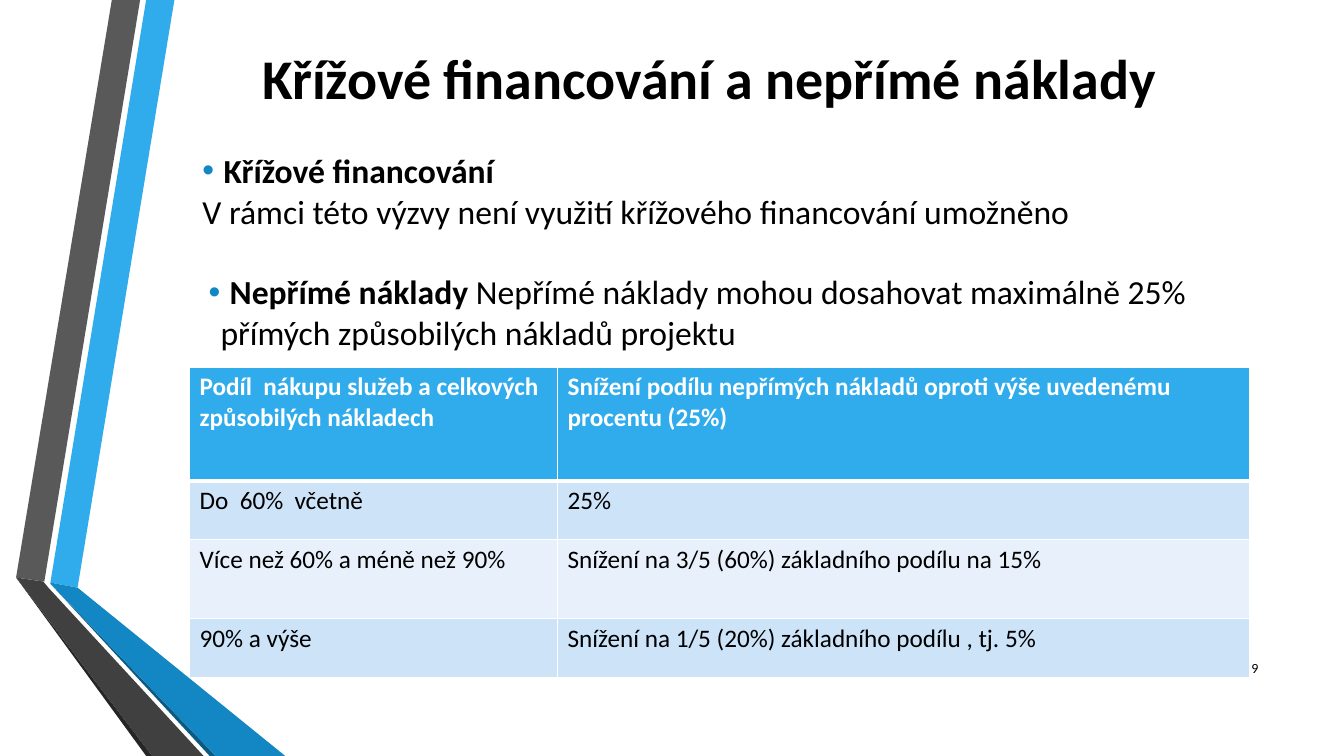
"""Build the slide on cross-financing and indirect costs."""
import pptx
import pptx.dml.color
import pptx.enum.text
import pptx.oxml
import pptx.oxml.ns
import pptx.util
from lxml import etree

Inches, Pt = pptx.util.Inches, pptx.util.Pt
ALIGN, ANCHOR = pptx.enum.text.PP_ALIGN, pptx.enum.text.MSO_ANCHOR
FONT = "Calibri"
BLACK, WHITE, SKY, BLUE = "000000", "FFFFFF", "30ACEC", "1287C3"

BANDS = [
    (SKY, [(0.5, 5.78), (0.77, 5.83), (1.73, 0), (1.45, 0)]),
    ("595959", [(1.39, 0), (1.11, 0), (0.16, 5.73), (0.44, 5.77)]),
    ("262626", [(0.16, 5.73), (1.45, 7.5), (1.51, 7.5)]),
    ("0C5A82", [(0.5, 5.79), (2.08, 7.5), (2.14, 7.5)]),
    (BLUE, [(0.5, 5.79), (2.14, 7.5), (2.83, 7.5), (0.77, 5.83), (0.5, 5.78)]),
    ("404040", [(2.02, 7.5), (0.48, 5.83), (0.43, 5.77), (0.16, 5.73), (1.51, 7.5)]),
]
TITLE = "Křížové financování a nepřímé náklady"
BODY = [
    dict(runs=[("Křížové financování", True)], left=0.71, bullet=True),
    dict(runs=[("V rámci této výzvy není využití křížového financování umožněno", False)],
         left=0.5),
    dict(runs=[("Nepřímé náklady ", True),
               ("Nepřímé náklady mohou dosahovat maximálně 25%", False)],
         left=0.77, bullet=True, gap=29),
    dict(runs=[("přímých způsobilých nákladů projektu", False)], left=0.68),
]
NUMBER = "9"
COLS = [3.65, 6.86]
ROWS = [
    (1.13, SKY, ["Podíl  nákupu služeb a celkových způsobilých nákladech",
                 "Snížení podílu nepřímých nákladů oproti výše uvedenému  procentu (25%)"]),
    (0.58, "CDE3F8", ["Do  60%  včetně", "25%"]),
    (0.79, "E8F1FB", ["Více než 60% a méně než 90%",
                      "Snížení na 3/5 (60%) základního podílu na 15%"]),
    (0.58, "CDE3F8", ["90% a výše", "Snížení na 1/5 (20%) základního podílu , tj. 5%"]),
]


def paint(part, color):
    part.solid()
    part.fore_color.rgb = pptx.dml.color.RGBColor.from_string(color)


def node(root, tag, **attrs):
    return etree.SubElement(root, pptx.oxml.ns.qn(tag), **attrs)


def write(para, text, size=24, color=BLACK, bold=False, align=ALIGN.LEFT):
    para.alignment = align
    run = para.add_run()
    run.text = text
    font = run.font
    font.name, font.size, font.bold = FONT, Pt(size), bold
    paint(font.fill, color)


def frame(slide, left, top, width, height):
    text = slide.shapes.add_textbox(*map(Inches, (left, top, width, height))).text_frame
    text.word_wrap = True
    return text


def indent(para, left, bullet):
    props = para._p.get_or_add_pPr()
    props.set("marL", str(Inches(left)))
    props.set("indent", str(Inches(-0.21 if bullet else 0)))
    if bullet:
        node(node(props, "a:buClr"), "a:srgbClr", val=BLUE)
        node(props, "a:buFont", typeface="Arial")
        node(props, "a:buChar", char="•")


def border(cell, top, bottom):
    props = cell._tc.get_or_add_tcPr()
    for side, width in zip("LRTB", (1, 1, top, bottom)):
        line = node(props, "a:ln" + side, w=str(Pt(width)))
        node(node(line, "a:solidFill"), "a:srgbClr", val=WHITE)


def draw_bands(slide):
    for color, points in BANDS:
        spots = [(Inches(x), Inches(y)) for x, y in points]
        build = slide.shapes.build_freeform(*spots[0])
        build.add_line_segments(spots[1:], close=True)
        band = build.convert_to_shape()
        band.shadow.inherit = False
        paint(band.fill, color)
        band.line.fill.background()


def draw_body(slide):
    text = frame(slide, 1.41, 1.44, 11.26, 2.93)
    for i, item in enumerate(BODY):
        para = text.add_paragraph() if i else text.paragraphs[0]
        para.space_before = Pt(item.get("gap", 0))
        indent(para, item["left"], item.get("bullet", False))
        for words, bold in item["runs"]:
            write(para, words, bold=bold)


def draw_table(slide):
    high = sum(row[0] for row in ROWS)
    table = slide.shapes.add_table(len(ROWS), len(COLS), Inches(1.88), Inches(3.64),
                                   Inches(sum(COLS)), Inches(high)).table
    for col, width in zip(table.columns, COLS):
        col.width = Inches(width)
    for r, (height, fill, texts) in enumerate(ROWS):
        table.rows[r].height = Inches(height)
        head = r == 0
        for c, words in enumerate(texts):
            cell = table.cell(r, c)
            border(cell, 3 if r == 1 else 1, 3 if head else 1)
            paint(cell.fill, fill)
            write(cell.text_frame.paragraphs[0], words, size=18,
                  color=WHITE if head else BLACK, bold=head)


def main():
    deck = pptx.Presentation()
    deck.slide_width, deck.slide_height = Inches(13.33), Inches(7.5)
    slide = deck.slides.add_slide(deck.slide_layouts[6])
    draw_bands(slide)
    title = frame(slide, 2.08, 0.38, 9.91, 0.77)
    write(title.paragraphs[0], TITLE, size=40, bold=True, align=ALIGN.CENTER)
    draw_body(slide)
    page = frame(slide, 11.98, 6.43, 0.6, 0.4)
    page.vertical_anchor = ANCHOR.MIDDLE
    write(page.paragraphs[0], NUMBER, size=10, align=ALIGN.RIGHT)
    draw_table(slide)
    deck.save("out.pptx")


if __name__ == "__main__":
    main()
